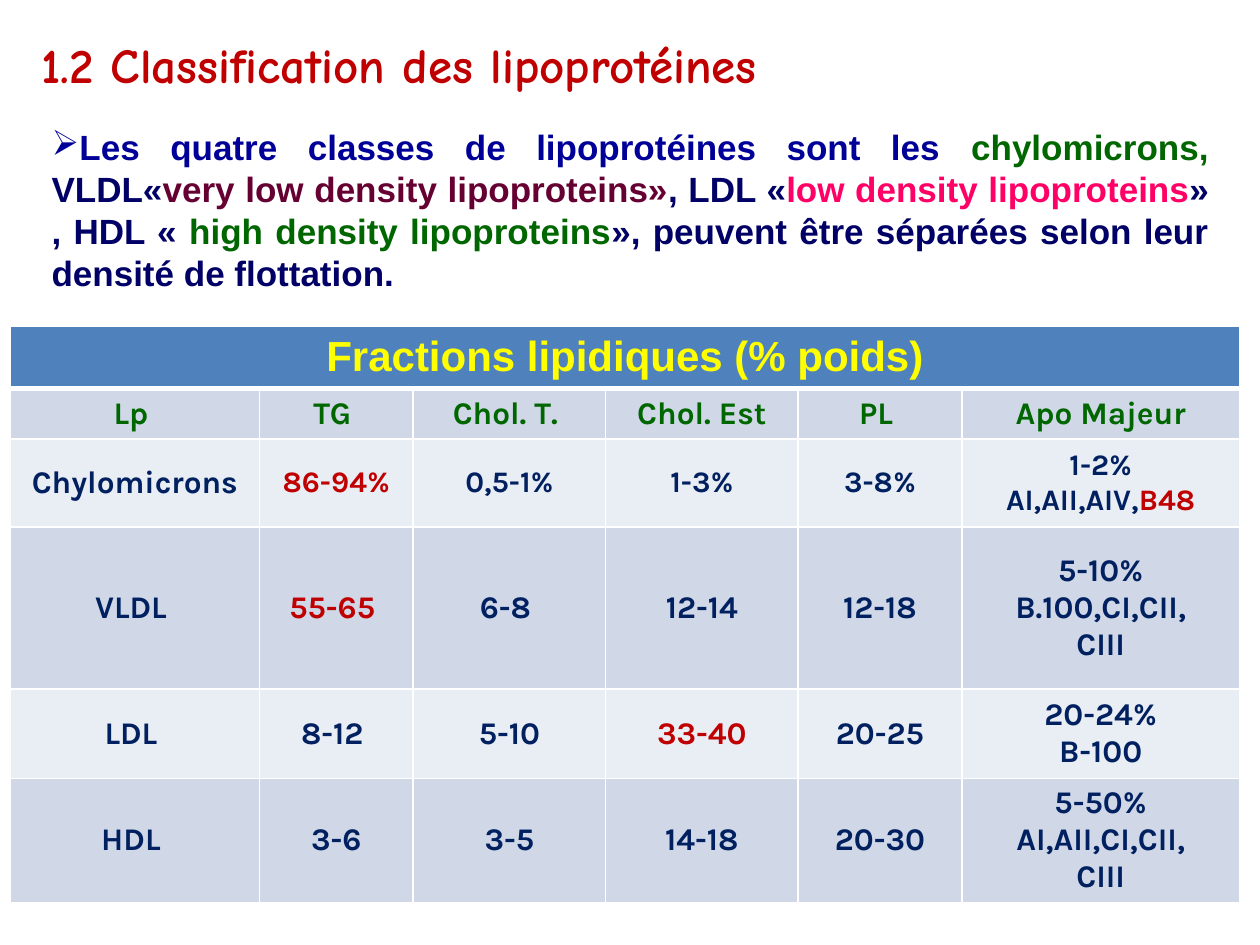
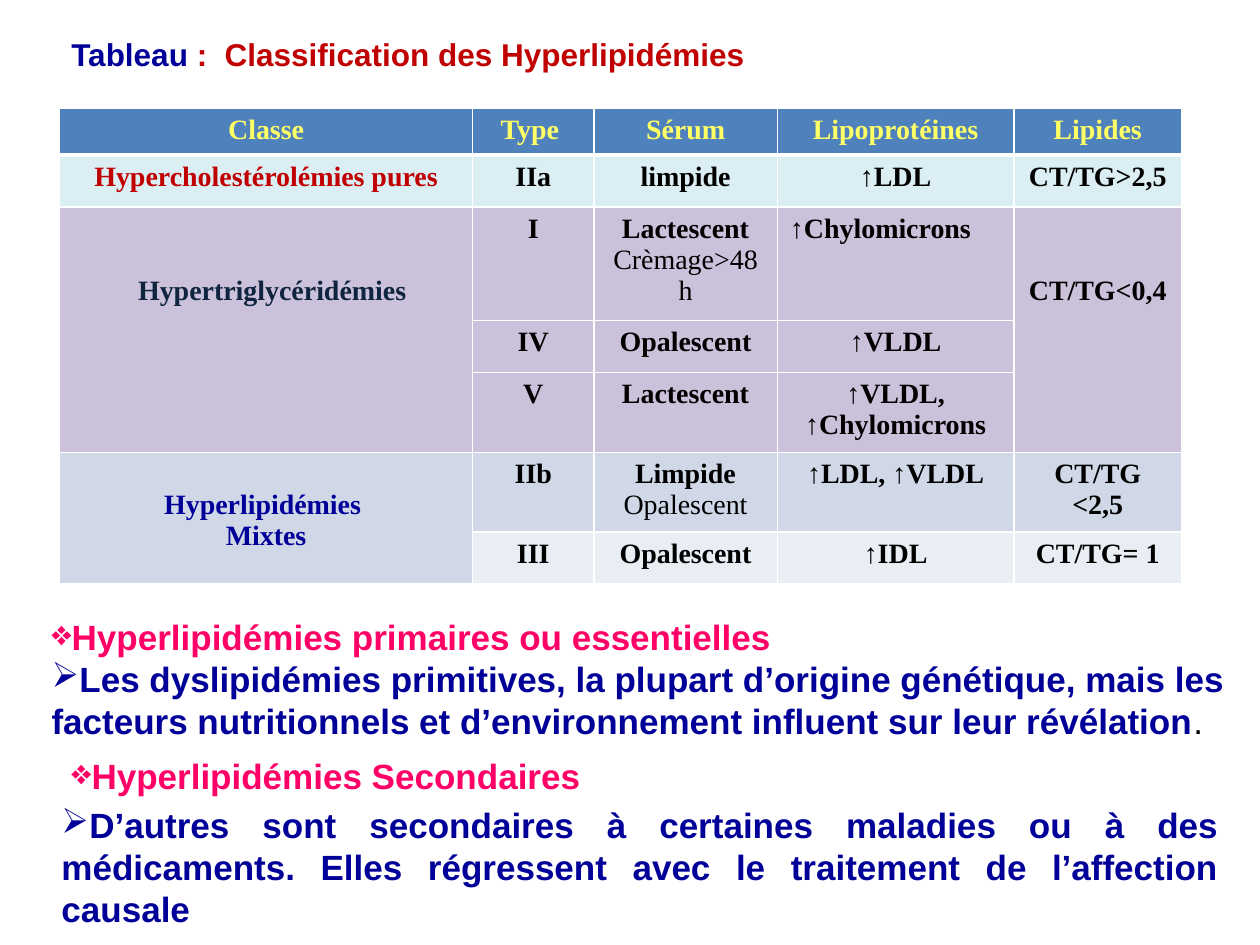
from dataclasses import dataclass

from lxml import etree
from pptx import Presentation
from pptx.dml.color import RGBColor
from pptx.enum import text
from pptx.oxml import ns
from pptx.util import Cm, Pt


@dataclass(frozen=True)
class Theme:
    red: str = "C00000"
    blue: str = "000099"
    navy: str = "000066"
    ink: str = "002060"
    slate: str = "0F243E"
    green: str = "006600"
    plum: str = "660033"
    pink: str = "FF0066"
    yellow: str = "FFFF00"
    pale_yellow: str = "FFFF66"
    black: str = "000000"
    white: str = "FFFFFF"
    header: str = "4F81BD"
    band_dark: str = "D0D8E8"
    band_light: str = "E9EDF4"
    aqua: str = "DBEEF4"
    lilac: str = "CCC1DA"
    title: int = 28
    banner: int = 24
    body: int = 20
    cell: int = 18
    small_cell: int = 17
    dense_cell: int = 16


theme = Theme()
align = text.PP_ALIGN
body = {"name": "Arial", "size": theme.body, "bold": True, "color": theme.blue}
karla = {"name": "Karla", "size": theme.cell, "bold": True, "color": theme.ink}
times = {"name": "Times New Roman", "size": theme.dense_cell, "bold": True, "color": theme.black}
red, blue, navy, green, plum, pink = (
    {"color": c} for c in (theme.red, theme.blue, theme.navy, theme.green, theme.plum, theme.pink)
)
light = {"bold": False}


def write(frame, content, base, alignment, bullets=""):
    lines = content.split("\n") if isinstance(content, str) else content
    for index, line in enumerate(lines):
        paragraph = frame.paragraphs[0] if index == 0 else frame.add_paragraph()
        paragraph.alignment = alignment
        if bullets:
            properties = paragraph._p.get_or_add_pPr()
            properties.set("marL", "0")
            properties.set("indent", "0")
            etree.SubElement(properties, ns.qn("a:buChar")).set("char", bullets[index])
        for words, changes in [(line, {})] if isinstance(line, str) else line:
            run = paragraph.add_run()
            run.text = words
            for key, value in {**base, **changes}.items():
                if key == "color":
                    run.font.color.rgb = RGBColor.from_string(value)
                else:
                    setattr(run.font, key, Pt(value) if key == "size" else value)


def build_table(slide, left, top, widths, heights, fills, rows, styles, anchor, merges):
    grid = slide.shapes.add_table(
        len(heights), len(widths), Cm(left), Cm(top), Cm(sum(widths)), Cm(sum(heights))
    ).table
    for column, width in zip(grid.columns, widths):
        column.width = Cm(width)
    for r, (height, fill, row, style) in enumerate(zip(heights, fills, rows, styles)):
        grid.rows[r].height = Cm(height)
        for c in range(len(widths)):
            cell = grid.cell(r, c)
            cell.vertical_anchor = anchor
            properties = cell._tc.get_or_add_tcPr()
            for side in "LRTB":
                thick = (r, side) in ((0, "B"), (1, "T"))
                border = etree.SubElement(properties, ns.qn("a:ln" + side), w=str(Pt(3 if thick else 1)))
                paint = etree.SubElement(border, ns.qn("a:solidFill"))
                etree.SubElement(paint, ns.qn("a:srgbClr"), val=theme.white)
            cell.fill.solid()
            cell.fill.fore_color.rgb = RGBColor.from_string(fill)
            if c < len(row) and row[c]:
                write(cell.text_frame, row[c], style, align.CENTER)
    for first_row, first_column, last_row, last_column in merges:
        grid.cell(first_row, first_column).merge(grid.cell(last_row, last_column))
    return grid


deck = Presentation()
deck.slide_width, deck.slide_height = Cm(25.4), Cm(19.05)
lipoproteins, disorders = (deck.slides.add_slide(deck.slide_layouts[6]) for _ in range(2))

build_table(
    lipoproteins, 0.21, 6.58,
    widths=[5.02, 3.1, 3.88, 3.88, 3.3, 5.6],
    heights=[1.25, 1.02, 1.77, 3.27, 1.8, 2.5],
    fills=[theme.header] + [theme.band_dark, theme.band_light] * 2 + [theme.band_dark],
    rows=[
        ["Fractions lipidiques (% poids)"],
        ["Lp ", "TG ", "Chol. T. ", "Chol. Est", "PL ", "Apo Majeur"],
        [
            [[("Chylomicrons", {"size": theme.cell})]], [[("86-94%", red)]], "0,5-1%", "1-3%", "3-8%",
            ["1-2%", [("AI,AII,AIV,", {}), ("B48", red)]],
        ],
        ["VLDL ", [[("55-65 ", red)]], "6-8 ", "12-14", "12-18", "5-10%\nB.100,CI,CII,\nCIII"],
        ["LDL ", "8-12 ", "5-10", [[("33-40", red)]], "20-25", "20-24%\nB-100"],
        ["HDL ", "3-6", "3-5", "14-18", "20-30", "5-50%\nAI,AII,CI,CII,\nCIII"],
    ],
    styles=[
        {**body, "size": theme.banner, "color": theme.yellow},
        {**karla, **green},
        {**karla, "size": theme.small_cell},
        karla, karla, karla,
    ],
    anchor=text.MSO_ANCHOR.MIDDLE,
    merges=[(0, 0, 0, 5)],
)

hyperlipidemias = build_table(
    disorders, 1.2, 2.19,
    widths=[8.33, 2.44, 3.7, 4.77, 3.38],
    heights=[0.93, 1.05, 1.6, 1.05, 1.6, 1.6, 1.05],
    fills=[theme.header, theme.aqua] + [theme.lilac] * 3 + [theme.band_dark, theme.band_light],
    rows=[
        ["Classe", "Type ", "Sérum", "Lipoprotéines", "Lipides"],
        [[[("Hypercholestérolémies pures", red)]], "IIa", "limpide", "↑LDL", "CT/TG>2,5"],
        [
            [[("Hypertriglycéridémies", {"color": theme.slate})]], "I",
            ["Lactescent", [("Crèmage>48h", light)]],
            [[("↑", light), ("Chylomicrons", {})]], "CT/TG<0,4",
        ],
        ["", "IV", "Opalescent", "↑VLDL", ""],
        ["", "V", "Lactescent", ["↑VLDL,", [("↑", light), ("Chylomicrons", {})]], ""],
        [
            [[("Hyperlipidémies ", blue)], [("Mixtes", blue)]], "IIb",
            ["Limpide", [("Opalescent", light)]],
            [[("↑", light), ("LDL, ↑VLDL", {})]], "CT/TG <2,5",
        ],
        ["", "III", "Opalescent", "↑IDL", "CT/TG= 1"],
    ],
    styles=[{**times, "color": theme.pale_yellow}] + [times] * 6,
    anchor=text.MSO_ANCHOR.TOP,
    merges=[(2, 0, 4, 0), (2, 4, 4, 4), (5, 0, 6, 0)],
)
for row, column, inset in ((2, 0, 1.38), (2, 4, 1.38), (5, 0, 0.75)):
    hyperlipidemias.cell(row, column).margin_top = Cm(inset)
hyperlipidemias.cell(2, 0).margin_left = Cm(0.5)
hyperlipidemias.cell(2, 3).text_frame.paragraphs[0].alignment = align.LEFT

passages = [
    (lipoproteins, (0.58, 0.58, 18.03, 1.45), False, "", align.LEFT,
     {"name": "Comic Neue", "size": theme.title, "bold": True, **red},
     "1.2 Classification des lipoprotéines"),
    (lipoproteins, (0.79, 2.41, 23.83, 3.68), True, "➢", align.JUSTIFY, {**body, **navy},
     [[
         ("Les quatre classes de lipoprotéines sont les ", blue),
         ("chylomicrons, ", green),
         ("VLDL«", {}),
         ("very low density lipoproteins»", plum),
         (", LDL «", {}),
         ("low density lipoproteins", pink),
         ("» , HDL « ", {}),
         ("high density lipoproteins", green),
         ("», peuvent être séparées selon leur densité de flottation.", {}),
     ]]),
    (disorders, (1.19, 0.58, 16.66, 1.02), True, "", align.LEFT,
     {**body, "size": theme.cell},
     [[("Tableau", {}), (" :  Classification des Hyperlipidémies", red)]]),
    (disorders, (0.79, 12.29, 24.2, 2.82), True, "❖➢", align.LEFT, body,
     [
         [("Hyperlipidémies primaires ou essentielles", pink)],
         [
             ("Les dyslipidémies primitives, la plupart d’origine génétique, mais les facteurs "
              "nutritionnels et d’environnement influent sur leur révélation", {}),
             (".", {"color": theme.black, "bold": False}),
         ],
     ]),
    (disorders, (0.99, 16.08, 23.83, 2.82), True, "➢", align.JUSTIFY, body,
     "D’autres sont secondaires à certaines maladies ou à des médicaments. "
     "Elles régressent avec le traitement de l’affection causale"),
    (disorders, (1.19, 15.09, 11.07, 1.12), False, "❖", align.LEFT, {**body, **pink},
     "Hyperlipidémies Secondaires"),
]
for slide, place, wraps, bullets, alignment, style, content in passages:
    frame = slide.shapes.add_textbox(*map(Cm, place)).text_frame
    for key, value in {"word_wrap": wraps, "auto_size": text.MSO_AUTO_SIZE.SHAPE_TO_FIT_TEXT}.items():
        setattr(frame, key, value)
    write(frame, content, style, alignment, bullets)

deck.save("out.pptx")
